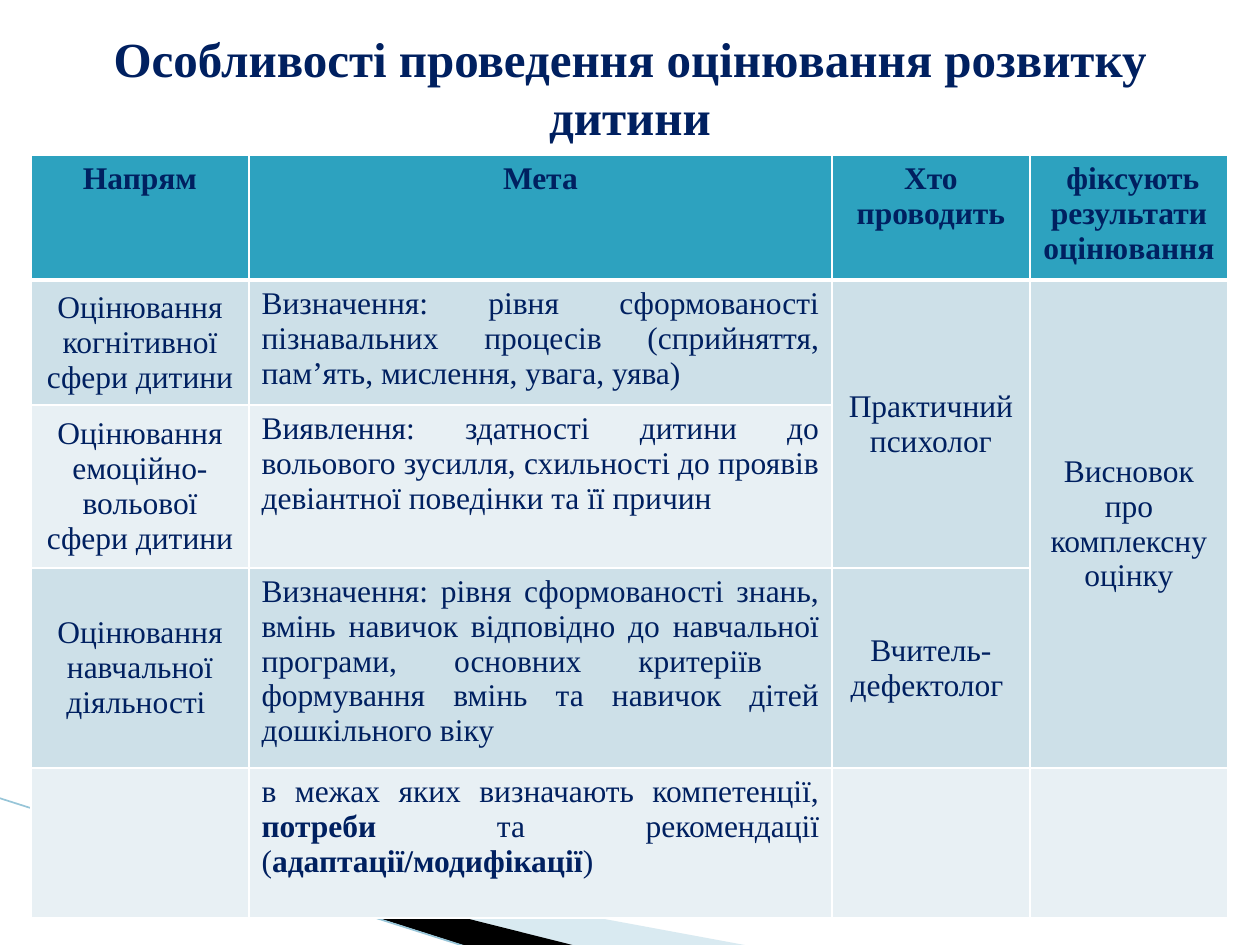
import pptx
import pptx.util
import pptx.dml.color
import pptx.enum.shapes
import pptx.enum.text
import pptx.oxml
import pptx.oxml.ns

RGB = pptx.dml.color.RGBColor
ALIGN = pptx.enum.text.PP_ALIGN
ANCHOR = pptx.enum.text.MSO_ANCHOR

PX = 914400 / 126
FONT = "Times New Roman"
NAVY = RGB(0x00, 0x20, 0x60)
TEAL = RGB(0x2D, 0xA2, 0xBF)
BAND_DARK = RGB(0xCD, 0xE0, 0xE8)
BAND_LIGHT = RGB(0xE8, 0xF0, 0xF4)
WHITE = RGB(0xFF, 0xFF, 0xFF)
BLACK = RGB(0x00, 0x00, 0x00)
WEDGE_BLUE = RGB(0xA0, 0xCB, 0xDC)
LINE_BLUE = RGB(0x97, 0xC5, 0xD8)

COLS = [218, 583, 198, 198]
ROWS = [125, 125, 163, 200, 150]
MERGES = [((1, 2), (2, 2)), ((1, 3), (3, 3))]
HEADERS = ["Напрям", "Мета", "Хто проводить", " фіксують результати оцінювання "]
BODY = [
    ["Оцінювання когнітивної сфери дитини",
     "Визначення: рівня сформованості пізнавальних процесів "
     "(сприйняття, пам’ять, мислення, увага, уява)",
     "Практичний психолог", "Висновок про комплексну оцінку"],
    ["Оцінювання емоційно-вольової сфери дитини",
     "Виявлення: здатності дитини до вольового зусилля, схильності "
     "до проявів девіантної поведінки та її причин", "", ""],
    ["Оцінювання навчальної діяльності ",
     "Визначення: рівня сформованості знань, вмінь навичок відповідно "
     "до навчальної програми, основних критеріїв  формування вмінь та "
     "навичок дітей дошкільного віку", "Вчитель-дефектолог ", ""],
    ["",
     [("в межах яких визначають компетенції, ", False), ("потреби", True),
      (" та рекомендації (", False), ("адаптації/модифікації", True), (")", False)],
     "", ""],
]


def px(n):
    """Turn pixels into EMU."""
    return pptx.util.Emu(round(n * PX))


def add_run(p, text, size, bold):
    """Append one navy run to a paragraph."""
    r = p.add_run()
    r.text = text
    r.font.name = FONT
    r.font.size = pptx.util.Pt(size)
    r.font.bold = bold
    r.font.color.rgb = NAVY


def add_wedge(slide, points, color, alpha=None):
    """Draw a filled outline without a line, optionally translucent."""
    builder = slide.shapes.build_freeform(*points[0], scale=PX)
    builder.add_line_segments(points[1:], close=True)
    sp = builder.convert_to_shape()
    sp.shadow.inherit = False
    sp.line.fill.background()
    sp.fill.solid()
    sp.fill.fore_color.rgb = color
    if alpha is not None:
        clr = sp.fill._xPr.find(".//" + pptx.oxml.ns.qn("a:srgbClr"))
        pptx.oxml.ns.qn("a:alpha")
        add_child(clr, f'<a:alpha {pptx.oxml.ns.nsdecls("a")} val="{alpha * 1000}"/>')


def add_child(parent, xml):
    """Append an XML fragment to an element."""
    parent.append(pptx.oxml.parse_xml(xml))


def add_line(slide, x1, y1, x2, y2, color, width):
    """Draw a straight line without a shadow."""
    line = slide.shapes.add_connector(
        pptx.enum.shapes.MSO_CONNECTOR.STRAIGHT, px(x1), px(y1), px(x2), px(y2))
    line.line.color.rgb = color
    line.line.width = pptx.util.Pt(width)
    add_child(line._element.spPr, f'<a:effectLst {pptx.oxml.ns.nsdecls("a")}/>')


def set_borders(cell, top, bottom):
    """Give a cell white borders, with top and bottom widths in points."""
    tc_pr = cell._tc.get_or_add_tcPr()
    for side, width in (("L", 1), ("R", 1), ("T", top), ("B", bottom)):
        add_child(tc_pr, f'<a:ln{side} {pptx.oxml.ns.nsdecls("a")} '
                         f'w="{pptx.util.Pt(width)}"><a:solidFill>'
                         f'<a:srgbClr val="{WHITE}"/></a:solidFill></a:ln{side}>')


def fill_cell(cell, content, row, col):
    """Format one cell by its row and column and add its runs."""
    set_borders(cell, 3 if row == 1 else 1, 3 if row == 0 else 1)
    cell.fill.solid()
    cell.fill.fore_color.rgb = TEAL if row == 0 else BAND_DARK if row % 2 else BAND_LIGHT
    is_goal = row > 0 and col == 1
    cell.vertical_anchor = ANCHOR.TOP if row == 0 or is_goal else ANCHOR.MIDDLE
    p = cell.text_frame.paragraphs[0]
    p.alignment = ALIGN.JUSTIFY if is_goal else ALIGN.CENTER
    runs = [(content, row == 0)] if isinstance(content, str) else content
    for text, bold in runs:
        if text:
            add_run(p, text, 18, bold)


def add_assessment_table(slide):
    """Build the table of assessment directions."""
    table = slide.shapes.add_table(
        len(ROWS), len(COLS), px(31), px(155), px(sum(COLS)), px(sum(ROWS))).table
    for column, width in zip(table.columns, COLS):
        column.width = px(width)
    for row, height in zip(table.rows, ROWS):
        row.height = px(height)
    for first, last in MERGES:
        table.cell(*first).merge(table.cell(*last))
    for i, contents in enumerate([HEADERS] + BODY):
        for j, content in enumerate(contents):
            fill_cell(table.cell(i, j), content, i, j)


def set_title(slide, text):
    """Place and format the title placeholder."""
    sp = slide.shapes.title
    sp.left, sp.top, sp.width, sp.height = px(63), px(16), px(1134), px(79)
    tf = sp.text_frame
    tf.word_wrap = True
    tf.auto_size = pptx.enum.text.MSO_AUTO_SIZE.NONE
    tf.vertical_anchor = ANCHOR.TOP
    tf.margin_top = px(12)
    p = tf.paragraphs[0]
    p.alignment = ALIGN.CENTER
    add_run(p, text, 28, True)


def main():
    """Build the slide and save it."""
    prs = pptx.Presentation()
    prs.slide_width, prs.slide_height = px(1260), px(945)
    slide = prs.slides.add_slide(prs.slide_layouts[5])
    add_wedge(slide, [(69, 820), (750, 946), (575, 946), (69, 819)], WEDGE_BLUE, 40)
    add_wedge(slide, [(67, 818), (576, 946), (469, 947), (68, 819)], BLACK)
    add_line(slide, -1, 798, 467, 947, LINE_BLUE, 0.95)
    add_assessment_table(slide)
    set_title(slide, "Особливості проведення оцінювання розвитку дитини")
    prs.save("out.pptx")


if __name__ == "__main__":
    main()
